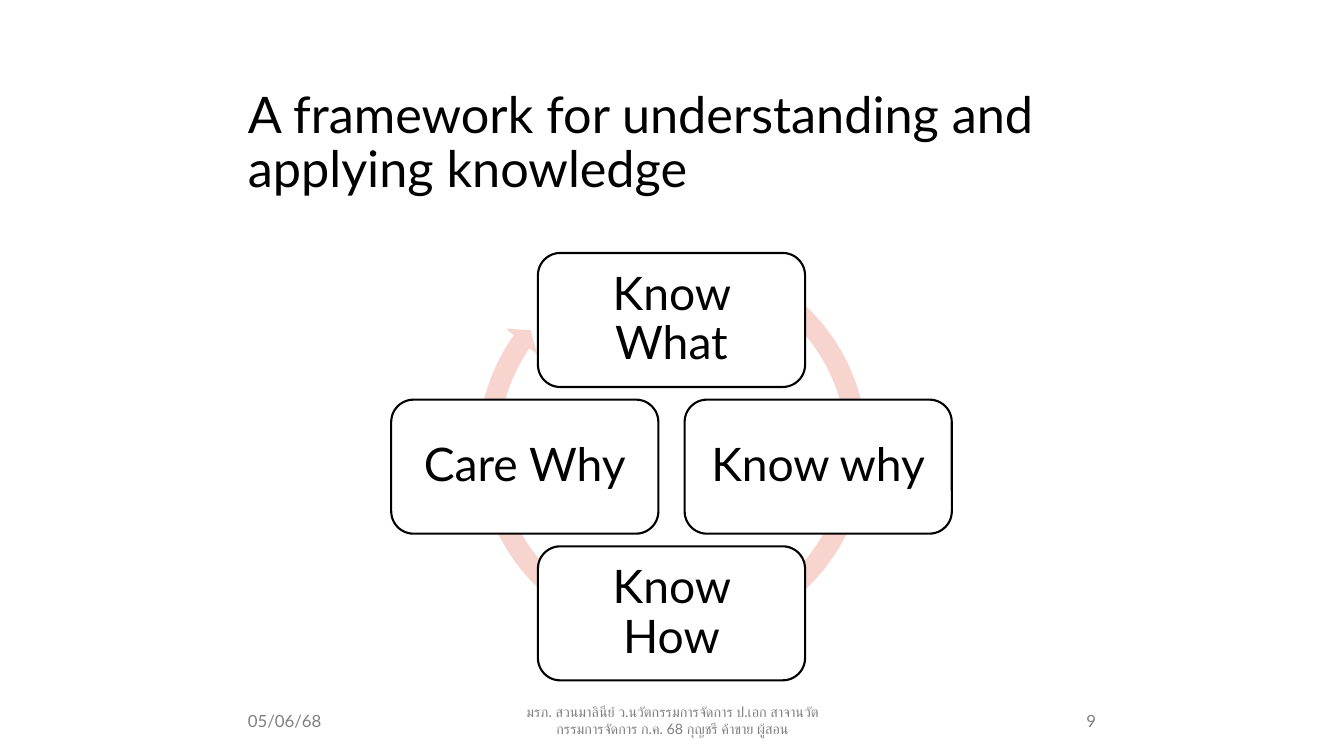
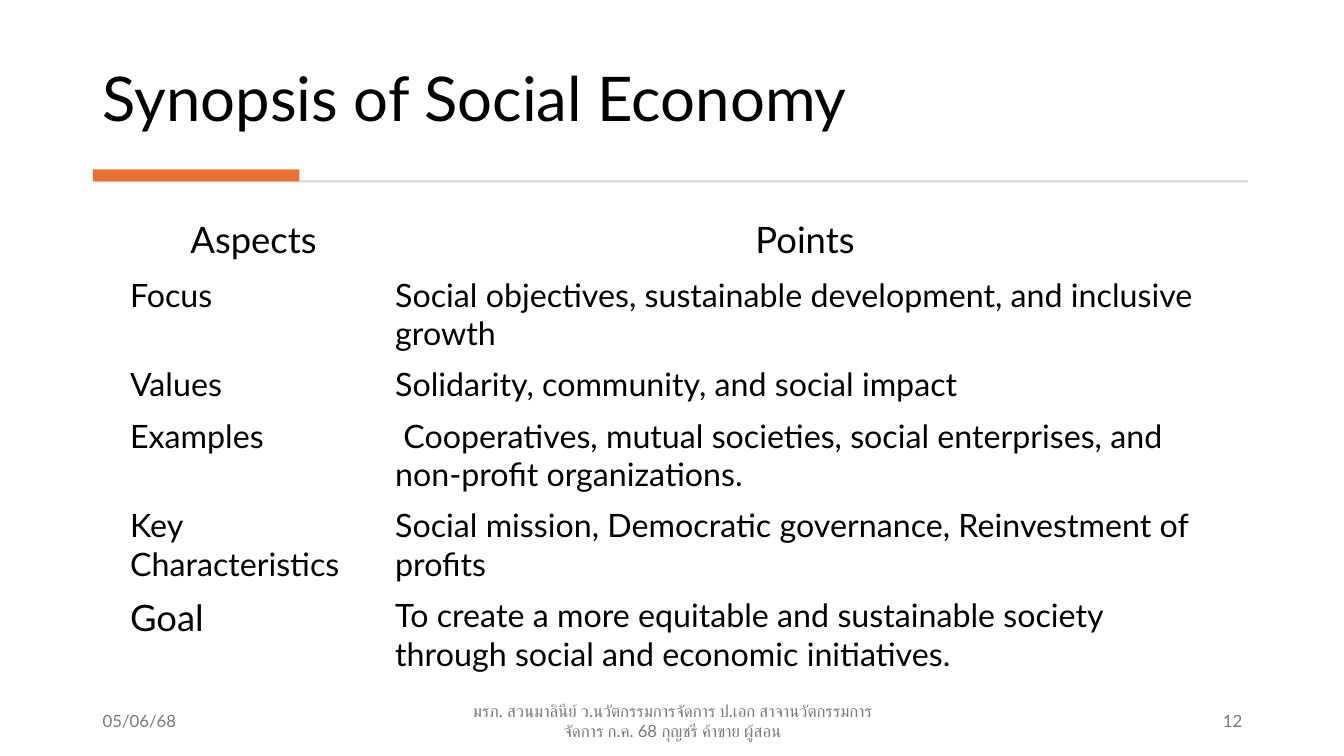
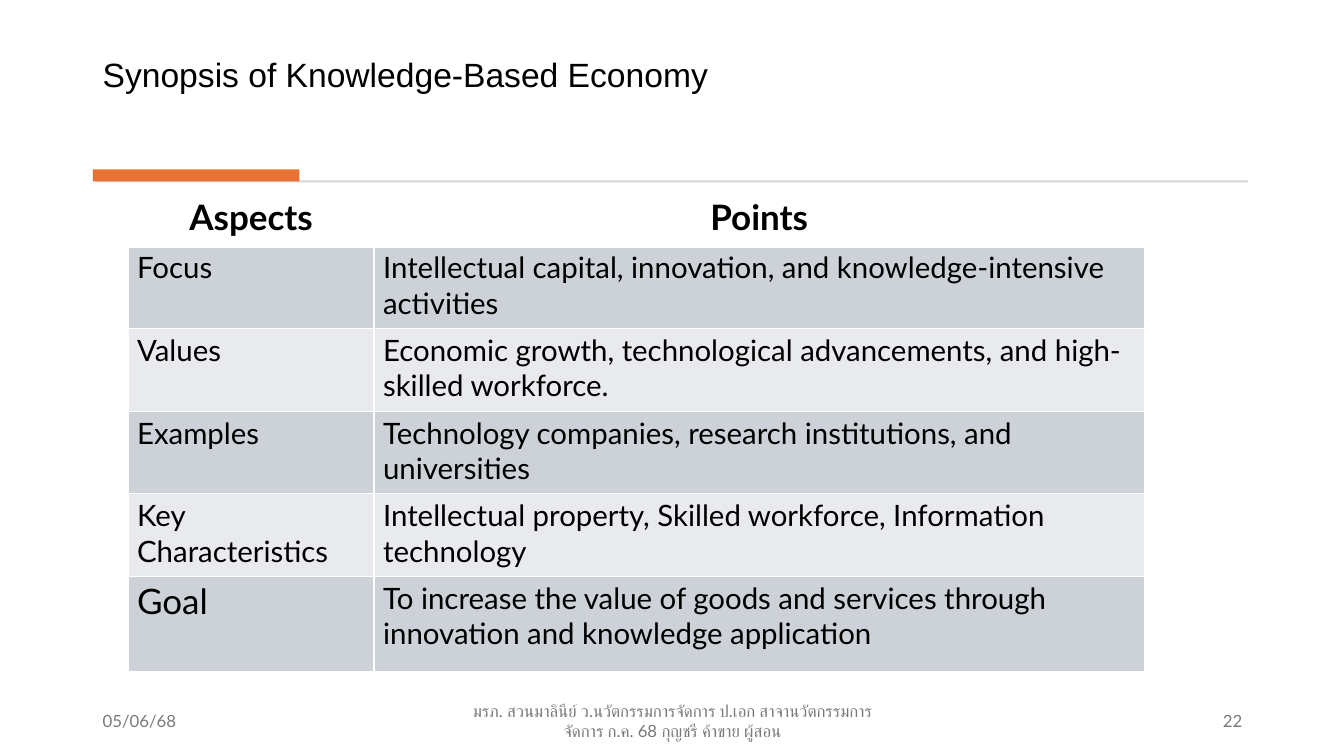
from lxml import etree
from pptx import Presentation
from pptx.dml.color import RGBColor
from pptx.enum.shapes import MSO_SHAPE
from pptx.enum.text import MSO_ANCHOR, PP_ALIGN
from pptx.oxml.ns import qn
from pptx.util import Inches, Pt

LEFT, CENTER, RIGHT = PP_ALIGN.LEFT, PP_ALIGN.CENTER, PP_ALIGN.RIGHT
MIDDLE, BOTTOM = MSO_ANCHOR.MIDDLE, MSO_ANCHOR.BOTTOM
RECTANGLE, ROUNDED = MSO_SHAPE.RECTANGLE, MSO_SHAPE.ROUNDED_RECTANGLE
CIRCULAR_ARROW = MSO_SHAPE.CIRCULAR_ARROW

# Shared style
FONT = "Lato"
BLACK, WHITE = "000000", "FFFFFF"
ORANGE, RULE_GREY, ARROW_PINK = "E97132", "D5D5D5", "F7D5CE"
BAND_DARK, BAND_LIGHT = "CCD2D8", "E8EAED"

# Shared footer
DATE = "05/06/68"
FOOTER = ("มรภ. สวนมาลินีย์ ว.นวัตกรรมการจัดการ ป.เอก "
          "สาจานวัตกรรมการจัดการ ก.ค. 68 กุญชรี ค้าขาย ผู้สอน")
# Left and width of date, footer and page number
NARROW_FOOTER = {"slots": [(2.36, 2.02), (4.98, 3.38), (8.93, 2.04)],
                 "size": 10.2, "color": "808080"}
WIDE_FOOTER = {"slots": [(0.92, 3), (4.42, 4.5), (9.42, 3)],
               "size": 12, "color": "797979"}

# Framework slide: box label and direction from the centre
FRAMEWORK_TITLE = "A framework for understanding and applying knowledge"
KNOWLEDGE = [("Know What", 0, -1), ("Know why", 1, 0),
             ("Know How", 0, 1), ("Care Why", -1, 0)]
CYCLE_CENTER, CYCLE_RADIUS = (6.66, 4.63), 1.455
CYCLE_BOX = (2.65, 1.33)
ARROW_AT = (4.64, 2.41, 4.06, 4.06)
ARROW_ADJUSTMENTS = (0.05, 2.73, 129.04, 179.82, 0.05)

# Synopsis slides
HEADINGS = ("Aspects", "Points")
ASPECTS = ("Focus", "Values", "Examples", "Key Characteristics", "Goal")
SYNOPSES = [
    {
        "title": "Synopsis of Social Economy",
        "title_height": 1.11, "title_size": 44, "title_font": FONT,
        "number": "12",
        "points": (
            "Social objectives, sustainable development, and inclusive growth",
            "Solidarity, community, and social impact",
            " Cooperatives, mutual societies, social enterprises, "
            "and non-profit organizations.",
            "Social mission, Democratic governance, Reinvestment of profits",
            "To create a more equitable and sustainable society through "
            "social and economic initiatives.",
        ),
        "table_at": (1.2, 2.11),
        "columns": (2.63, 8.31),
        "rows": (0.57, 0.89, 0.51, 0.89, 0.89, 1.02),
        "large": 26, "small": 23, "bold": False, "margin": 0.05,
        "bands": (WHITE, WHITE),
    },
    {
        "title": "Synopsis of Knowledge-Based Economy",
        "title_height": 0.71, "title_size": 24, "title_font": "Arial",
        "number": "22",
        "points": (
            "Intellectual capital, innovation, and knowledge-intensive "
            "activities",
            "Economic growth, technological advancements, and high-skilled "
            "workforce.",
            "Technology companies, research institutions, and universities",
            "Intellectual property, Skilled workforce, Information technology",
            "To increase the value of goods and services through innovation "
            "and knowledge application",
        ),
        "table_at": (1.27, 1.91),
        "columns": (2.44, 7.64),
        "rows": (0.53, 0.82, 0.82, 0.82, 0.82, 0.94),
        "large": 25, "small": 21, "bold": True, "margin": 0.04,
        "bands": (BAND_DARK, BAND_LIGHT),
    },
]


def rgb(value):
    return RGBColor.from_string(value)


def write(frame, text, size, color=BLACK, font=FONT, align=LEFT,
          bold=False, spacing=None):
    para = frame.paragraphs[0]
    para.alignment = align
    if spacing:
        para.line_spacing = spacing
    span = para.add_run()
    span.text = text
    span.font.size = Pt(size)
    span.font.name = font
    span.font.bold = bold
    span.font.color.rgb = rgb(color)


def add_text(page, at, text, size, anchor=MIDDLE, **style):
    frame = page.shapes.add_textbox(*map(Inches, at)).text_frame
    frame.word_wrap = True
    frame.vertical_anchor = anchor
    write(frame, text, size, **style)


def add_box(page, kind, at, fill, line=None):
    box = page.shapes.add_shape(kind, *map(Inches, at))
    box.shadow.inherit = False
    box.fill.solid()
    box.fill.fore_color.rgb = rgb(fill)
    if line:
        box.line.color.rgb = rgb(line)
        box.line.width = Pt(1.5)
    else:
        box.line.fill.background()
    return box


def add_title(page, at, text, size, font=FONT):
    add_text(page, at, text, size, BOTTOM, font=font, spacing=0.9)


def add_footer(page, number, layout):
    sizes = (12, layout["size"], 12)
    parts = zip(layout["slots"], (DATE, FOOTER, number), sizes,
                (LEFT, CENTER, RIGHT))
    for (left, width), text, size, align in parts:
        add_text(page, (left, 6.95, width, 0.4), text, size,
                 color=layout["color"], align=align)


def add_title_rule(page):
    add_box(page, RECTANGLE, (0.95, 1.79, 11.43, 0.02), RULE_GREY)
    add_box(page, RECTANGLE, (0.92, 1.68, 2.05, 0.12), ORANGE)


def set_borders(cell, bottom):
    properties = cell._tc.get_or_add_tcPr()
    for side, width in (("L", 1), ("R", 1), ("T", 1), ("B", bottom)):
        line = etree.SubElement(properties, qn("a:ln" + side),
                                w=str(Pt(width)))
        fill = etree.SubElement(line, qn("a:solidFill"))
        etree.SubElement(fill, qn("a:srgbClr"), val=WHITE)


def add_synopsis_table(page, synopsis):
    columns, rows = synopsis["columns"], synopsis["rows"]
    at = (*synopsis["table_at"], sum(columns), sum(rows))
    table = page.shapes.add_table(len(rows), len(columns),
                                  *map(Inches, at)).table
    for column, width in zip(table.columns, columns):
        column.width = Inches(width)
    for row, height in zip(table.rows, rows):
        row.height = Inches(height)

    content = [HEADINGS, *zip(ASPECTS, synopsis["points"])]
    for r, texts in enumerate(content):
        header = r == 0
        fill = WHITE if header else synopsis["bands"][(r - 1) % 2]
        for c, text in enumerate(texts):
            cell = table.cell(r, c)
            cell.margin_left = cell.margin_right = Inches(0.09)
            cell.margin_top = cell.margin_bottom = Inches(synopsis["margin"])
            set_borders(cell, bottom=3 if header else 1)
            cell.fill.solid()
            cell.fill.fore_color.rgb = rgb(fill)
            large = header or text == "Goal"
            write(cell.text_frame, text,
                  synopsis["large" if large else "small"],
                  align=CENTER if header else LEFT,
                  bold=header and synopsis["bold"])


def build_framework(page):
    add_title(page, (2.36, 0.75, 8.62, 1.27), FRAMEWORK_TITLE, 36)
    add_footer(page, "9", NARROW_FOOTER)

    # Cycle arrow behind the boxes
    arrow = add_box(page, CIRCULAR_ARROW, ARROW_AT, ARROW_PINK)
    for i, value in enumerate(ARROW_ADJUSTMENTS):
        arrow.adjustments[i] = value

    # Boxes around the centre
    width, height = CYCLE_BOX
    for label, across, down in KNOWLEDGE:
        left = CYCLE_CENTER[0] + across * CYCLE_RADIUS - width / 2
        top = CYCLE_CENTER[1] + down * CYCLE_RADIUS - height / 2
        box = add_box(page, ROUNDED, (left, top, width, height), WHITE, BLACK)
        frame = box.text_frame
        frame.word_wrap = True
        frame.vertical_anchor = MIDDLE
        frame.margin_left = frame.margin_right = Inches(0.14)
        frame.margin_top = frame.margin_bottom = Inches(0.14)
        write(frame, label, 33, align=CENTER, spacing=0.9)


def build_synopsis(page, synopsis):
    add_title(page, (0.92, 0.28, 11.49, synopsis["title_height"]),
              synopsis["title"], synopsis["title_size"],
              synopsis["title_font"])
    add_title_rule(page)
    add_synopsis_table(page, synopsis)
    add_footer(page, synopsis["number"], WIDE_FOOTER)


def main():
    deck = Presentation()
    deck.slide_width, deck.slide_height = Inches(13.33), Inches(7.5)
    blank = deck.slide_layouts[6]
    build_framework(deck.slides.add_slide(blank))
    for synopsis in SYNOPSES:
        build_synopsis(deck.slides.add_slide(blank), synopsis)
    deck.save("out.pptx")


if __name__ == "__main__":
    main()
